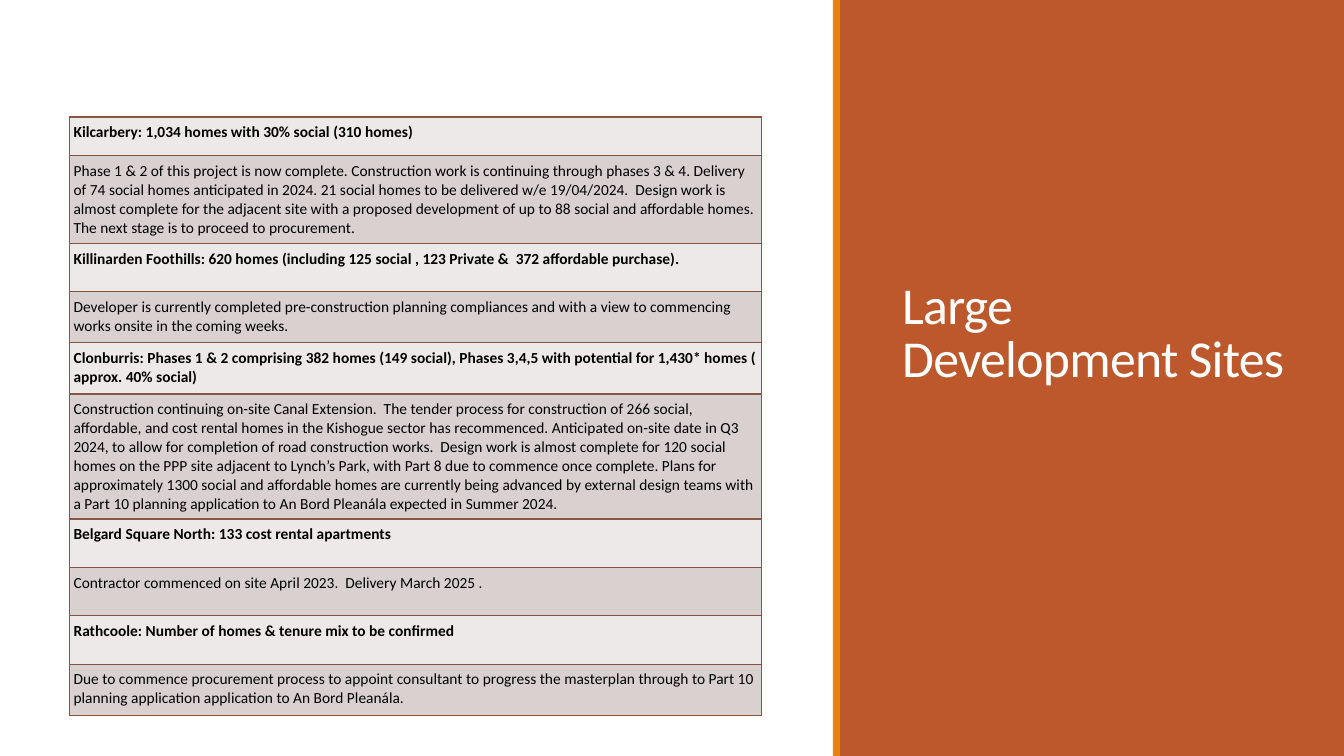
from lxml.etree import SubElement
from pptx import Presentation
from pptx.dml.color import RGBColor
from pptx.enum.shapes import MSO_SHAPE
from pptx.enum.text import MSO_ANCHOR
from pptx.oxml import parse_xml
from pptx.oxml.ns import nsdecls
from pptx.util import Inches, Pt

RUST = RGBColor(0xBD, 0x58, 0x2C)
AMBER = RGBColor(0xE4, 0x83, 0x12)
WHITE = RGBColor(0xFF, 0xFF, 0xFF)
BLACK = RGBColor(0x00, 0x00, 0x00)
PALE = RGBColor(0xED, 0xE9, 0xE8)
DUSK = RGBColor(0xD9, 0xD1, 0xCF)
BROWN = RGBColor(0x86, 0x56, 0x40)

WIDE, HIGH = 13.33, 7.5
SPLIT = WIDE * 5 / 8  # left edge of the title panel
STRIP = 0.07

# Each site: heading, status, heights of the two rows
SITES = [
    ("Kilcarbery: 1,034 homes with 30% social (310 homes)",
     "Phase 1 & 2 of this project is now complete. Construction work is continuing "
     "through phases 3 & 4. Delivery of 74 social homes anticipated in 2024. 21 social "
     "homes to be delivered w/e 19/04/2024.  Design work is almost complete for the "
     "adjacent site with a proposed development of up to 88 social and affordable "
     "homes. The next stage is to proceed to procurement.", 0.38, 0.33),
    ("Killinarden Foothills: 620 homes (including 125 social , 123 Private &  372 "
     "affordable purchase).",
     "Developer is currently completed pre-construction planning compliances and with "
     "a view to commencing works onsite in the coming weeks.", 0.48, 0.48),
    ("Clonburris: Phases 1 & 2 comprising 382 homes (149 social), Phases 3,4,5 with "
     "potential for 1,430* homes ( approx. 40% social)",
     "Construction continuing on-site Canal Extension.  The tender process for "
     "construction of 266 social, affordable, and cost rental homes in the Kishogue "
     "sector has recommenced. Anticipated on-site date in Q3 2024, to allow for "
     "completion of road construction works.  Design work is almost complete for 120 "
     "social homes on the PPP site adjacent to Lynch’s Park, with Part 8 due to "
     "commence once complete. Plans for approximately 1300 social and affordable homes "
     "are currently being advanced by external design teams with a Part 10 planning "
     "application to An Bord Pleanála expected in Summer 2024.", 0.48, 0.48),
    ("Belgard Square North: 133 cost rental apartments",
     "Contractor commenced on site April 2023.  Delivery March 2025 .", 0.48, 0.48),
    ("Rathcoole: Number of homes & tenure mix to be confirmed",
     "Due to commence procurement process to appoint consultant to progress the "
     "masterplan through to Part 10 planning application application to An Bord "
     "Pleanála.", 0.48, 0.48),
]


def write(frame, text, size=11, color=BLACK, bold=False, line=1.0, track=0):
    frame.word_wrap = True
    para = frame.paragraphs[0]
    para.line_spacing = line
    run = para.add_run()
    run.text = text
    font = run.font
    font.name, font.size, font.bold = "Calibri", Pt(size), bold
    font.color.rgb = color
    if track:
        run._r.get_or_add_rPr().set("spc", str(int(track * 100)))


def edge(cell):
    props = cell._tc.get_or_add_tcPr()
    for spot, side in enumerate(("lnL", "lnR", "lnT", "lnB")):
        line = parse_xml(f'<a:{side} {nsdecls("a")} w="{Pt(1)}"><a:solidFill>'
                         f'<a:srgbClr val="{BROWN}"/></a:solidFill></a:{side}>')
        props.insert(spot, line)


deck = Presentation()
deck.slide_width, deck.slide_height = Inches(WIDE), Inches(HIGH)
slide = deck.slides.add_slide(deck.slide_layouts[6])

# Title panel and its accent strip
for left, width, color in ((SPLIT, WIDE - SPLIT, RUST), (SPLIT - STRIP, STRIP, AMBER)):
    bar = slide.shapes.add_shape(MSO_SHAPE.RECTANGLE, Inches(left), 0,
                                 Inches(width), Inches(HIGH))
    bar.shadow.inherit = False
    bar.fill.solid()
    bar.fill.fore_color.rgb = color
    bar.line.fill.background()

# Title
title = slide.shapes.add_textbox(Inches(8.85), Inches(0.7), Inches(4), Inches(3.2))
title.text_frame.vertical_anchor = MSO_ANCHOR.BOTTOM
write(title.text_frame, "Large Development Sites", size=37, color=WHITE,
      line=0.85, track=-0.5)
title.text_frame.paragraphs[0].space_after = Pt(6)

# Table: a heading row and a status row for each site
rows = []
for head, note, top, low in SITES:
    rows += [(head, top, True, PALE), (note, low, False, DUSK)]
total = sum(row[1] for row in rows)
grid = slide.shapes.add_table(len(rows), 1, Inches(0.69), Inches(1.16),
                              Inches(6.86), Inches(total)).table
grid.first_row = grid.horz_banding = False
for index, (text, tall, bold, color) in enumerate(rows):
    grid.rows[index].height = Inches(tall)
    cell = grid.cell(index, 0)
    cell.margin_left = cell.margin_right = Inches(0.04)
    cell.margin_top, cell.margin_bottom = Inches(0.06), Inches(0.08)
    cell.fill.solid()
    cell.fill.fore_color.rgb = color
    edge(cell)
    write(cell.text_frame, text, bold=bold)

deck.save("out.pptx")
